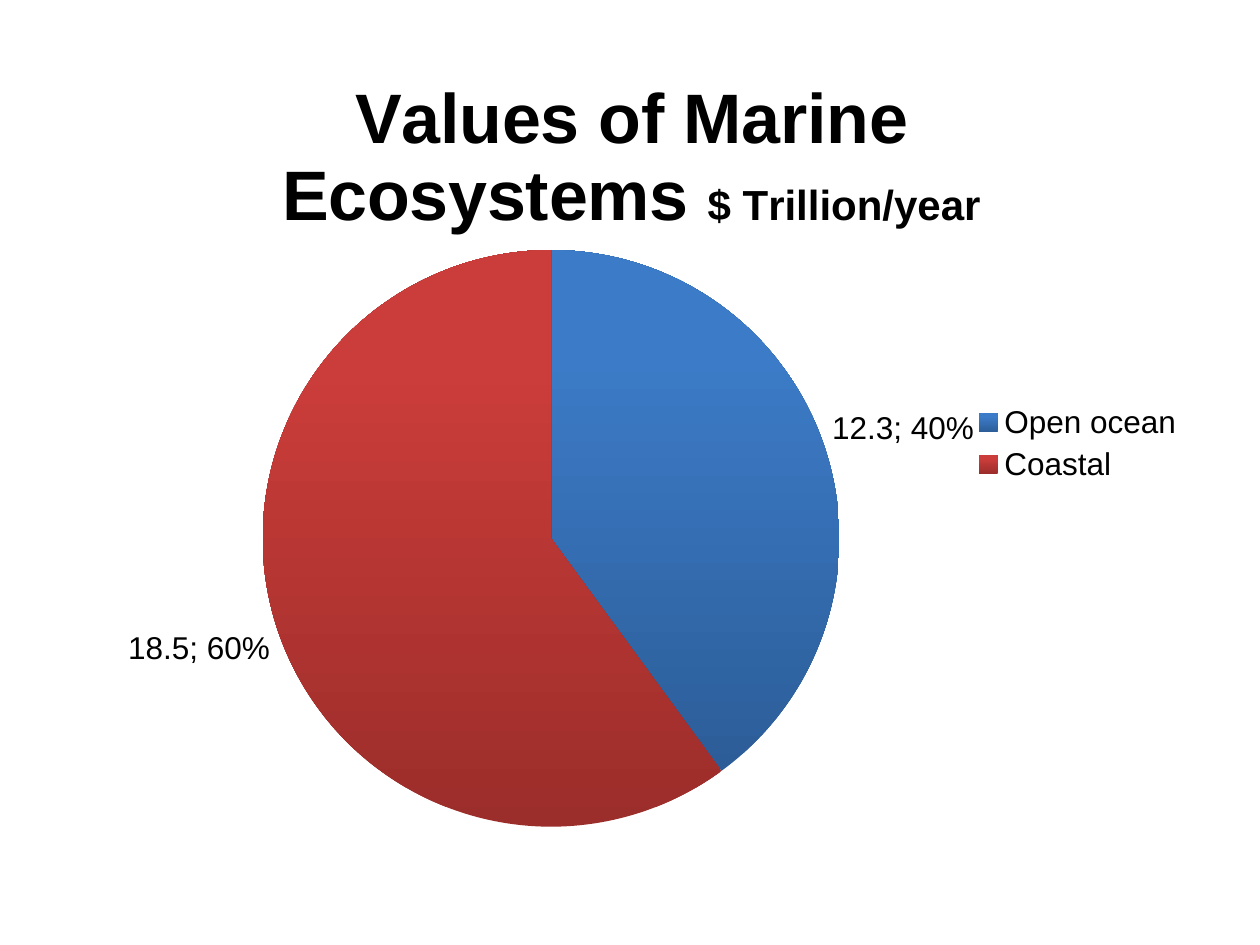
import pptx
import pptx.chart.data
import pptx.dml.color
import pptx.enum.chart
import pptx.oxml
import pptx.oxml.ns
import pptx.util

Pt = pptx.util.Pt
FACE = "Arial"


def paint(hue):
    return pptx.dml.color.RGBColor.from_string(hue)


def style(font, size, bold=False):
    font.name = FACE
    font.size = Pt(size)
    font.bold = bold
    font.color.rgb = paint("000000")


def shade(fill, stops):
    fill.gradient()
    fill.gradient_angle = 90
    for stop, (hue, pos) in zip(fill.gradient_stops, stops):
        stop.color.rgb = paint(hue)
        stop.position = pos


def place(item, after, inner=False, **sides):
    for old in item.findall(pptx.oxml.ns.qn("c:layout")):
        item.remove(old)
    target = '<c:layoutTarget val="inner"/>' if inner else ""
    modes = "".join(f'<c:{s}Mode val="edge"/>' for s in "xy")
    sizes = "".join(f'<c:{s} val="{v}"/>' for s, v in sides.items())
    layout = pptx.oxml.parse_xml(
        f'<c:layout {pptx.oxml.ns.nsdecls("c")}><c:manualLayout>'
        f"{target}{modes}{sizes}</c:manualLayout></c:layout>"
    )
    if after is None:
        item.insert(0, layout)
    else:
        after.addnext(layout)


def add_title(chart, parts):
    chart.has_title = True
    title = chart.chart_title
    para = title.text_frame.paragraphs[0]
    for text, size in parts:
        run = para.add_run()
        run.text = text
        style(run.font, size, True)
    title.include_in_layout = False
    node = title._element
    place(node, node.find(pptx.oxml.ns.qn("c:tx")), x=0.19, y=0.04)


def add_labels(plot):
    plot.has_data_labels = True
    labels = plot.data_labels
    labels.show_value = True
    labels.show_percentage = True
    labels.position = pptx.enum.chart.XL_LABEL_POSITION.OUTSIDE_END
    style(labels.font, 18)


def add_key(chart):
    chart.has_legend = True
    chart.legend.position = pptx.enum.chart.XL_LEGEND_POSITION.RIGHT
    chart.legend.include_in_layout = False
    style(chart.legend.font, 18)


def add_pie(slide, names, values, hues):
    data = pptx.chart.data.CategoryChartData()
    data.categories = names
    data.add_series("Series 1", values)
    kind = pptx.enum.chart.XL_CHART_TYPE.PIE
    frame = slide.shapes.add_chart(kind, Pt(36), Pt(24), Pt(648), Pt(459), data)
    chart = frame.chart
    style(chart.font, 18)
    plot = chart.plots[0]
    plot.vary_by_categories = True
    for index, stops in enumerate(hues):
        shade(plot.series[0].points[index].format.fill, stops)
    area = chart._chartSpace.chart.plotArea
    place(area, None, True, x=0.176, y=0.259, w=0.509, h=0.718)
    add_labels(plot)
    add_key(chart)
    return chart


def main():
    deck = pptx.Presentation()
    deck.slide_width, deck.slide_height = Pt(720), Pt(540)
    slide = deck.slides.add_slide(deck.slide_layouts[6])
    blue = [("2C5D98", 0), ("3C7BC7", 0.8)]
    red = [("9B2D2A", 0), ("CB3D3A", 0.8)]
    chart = add_pie(slide, ["Open ocean", "Coastal"], [12.3, 18.5], [blue, red])
    add_title(chart, [("Values of Marine Ecosystems ", 40), ("$ Trillion/year", 24)])
    deck.save("out.pptx")


if __name__ == "__main__":
    main()
